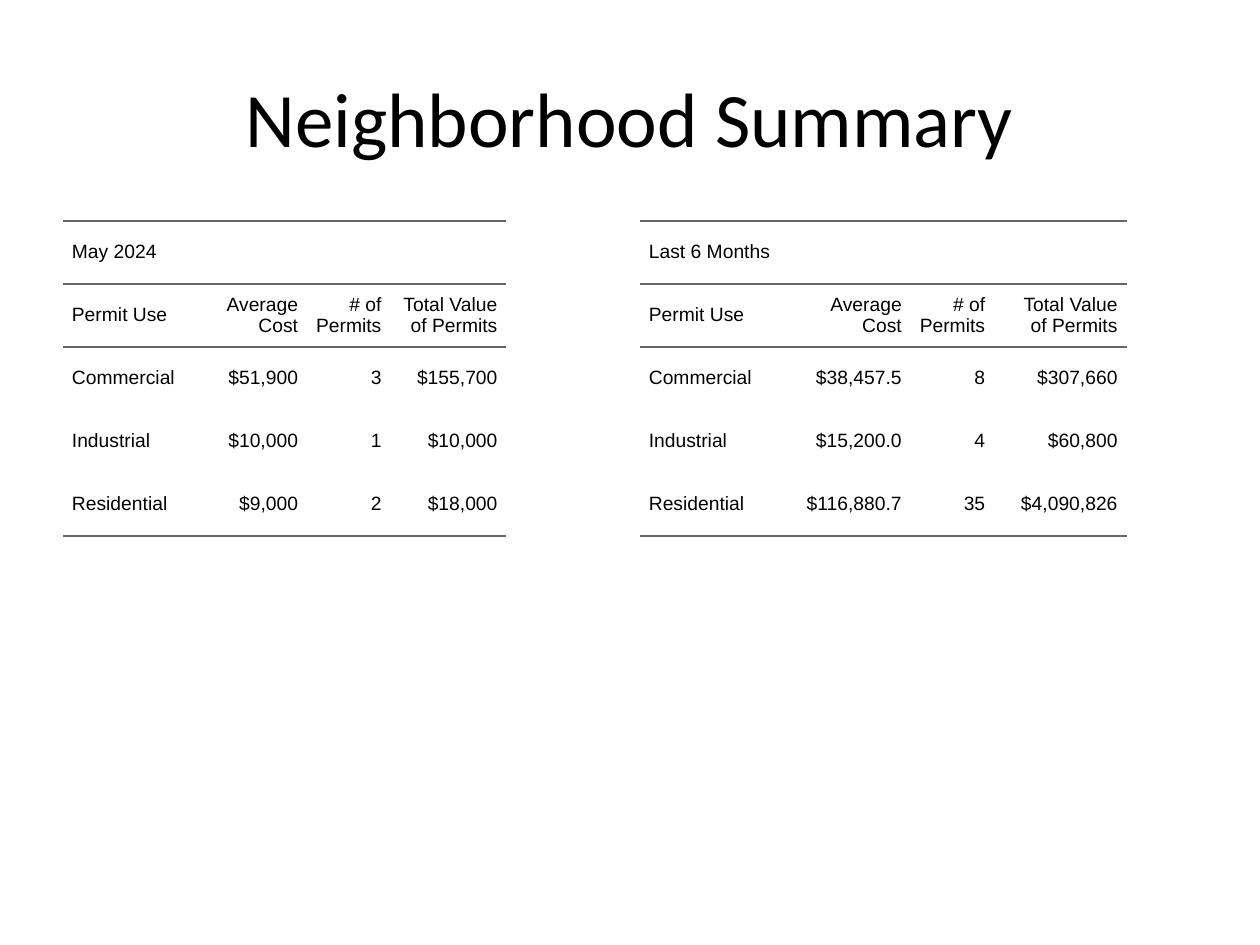
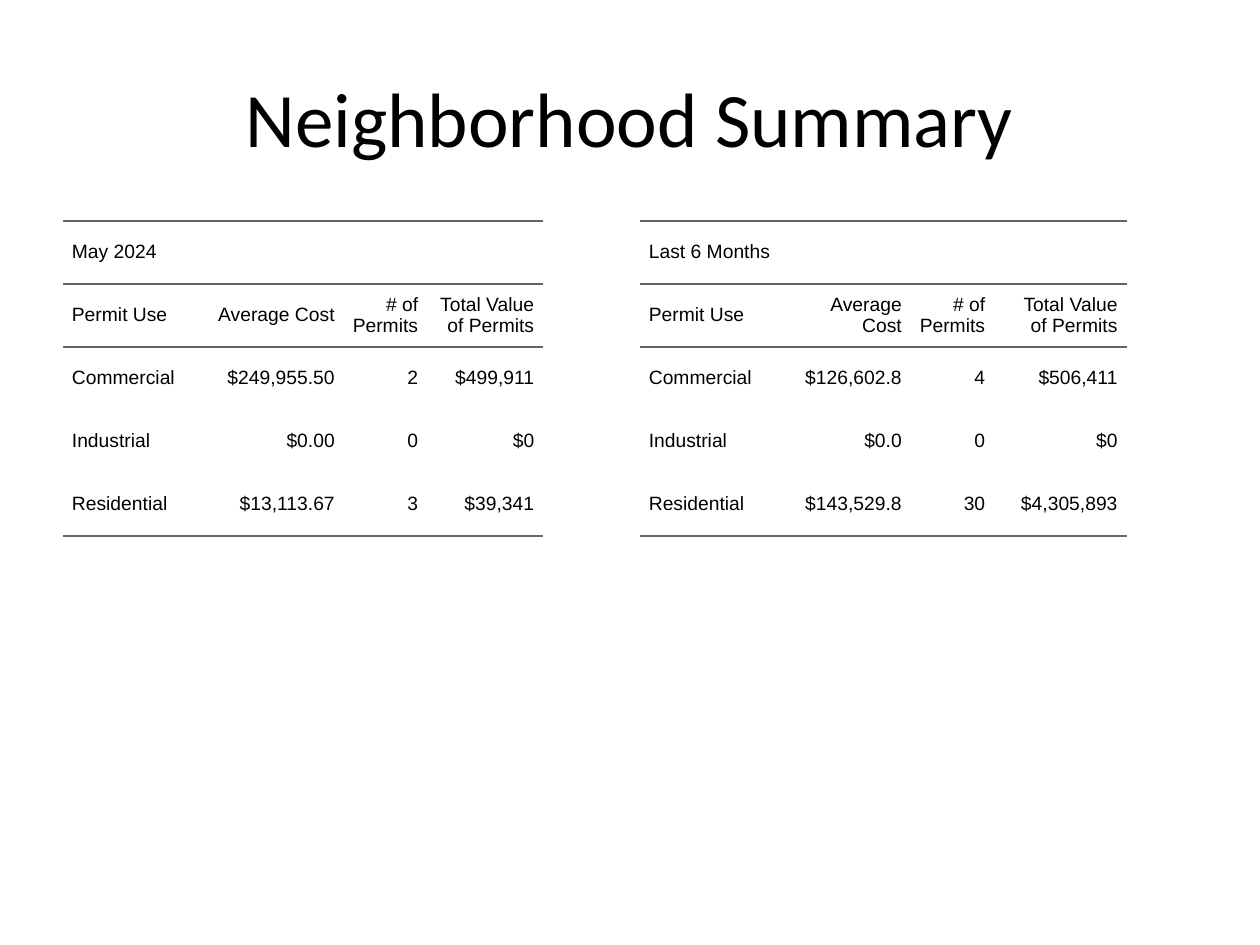
from dataclasses import dataclass

from lxml.etree import SubElement
from pptx import Presentation
from pptx.dml.color import RGBColor
from pptx.enum.text import MSO_ANCHOR, PP_ALIGN
from pptx.oxml.ns import qn
from pptx.oxml.xmlchemy import OxmlElement
from pptx.util import Cm, Pt

BLACK = RGBColor(0x00, 0x00, 0x00)
WHITE = RGBColor(0xFF, 0xFF, 0xFF)
RULE_GRAY = RGBColor(0x66, 0x66, 0x66)
TITLE_FONT = "Calibri"
TABLE_FONT = "Arial"
TITLE = "Neighborhood Summary"
HEADINGS = ("Permit Use", "Average Cost", "# of Permits", "Total Value of Permits")
USES = ("Commercial", "Industrial", "Residential")
MARGIN = Cm(1.27)
RIGHT_TABLE_LEFT = Cm(12.9)
TABLE_TOP = Cm(4.45)
FRAME_WIDTH = Cm(11.23)
FRAME_HEIGHT = Cm(12.57)
ROW_HEIGHT = Cm(1.27)
CELL_PADDING = Cm(0.18)
USE_WIDTH = Cm(2.79)
COUNT_WIDTH = Cm(1.68)
PLAIN_TABLE_STYLE = "{2D5ABB26-0587-4C30-8999-92F81FD0307C}"


@dataclass(frozen=True)
class PermitTable:
    period: str
    left: int
    cost_width: int
    value_width: int
    figures: tuple[tuple[str, str, str], ...]

    @property
    def rows(self) -> list[tuple[str, ...]]:
        return [(self.period,), HEADINGS] + [
            (use, *figures) for use, figures in zip(USES, self.figures)
        ]

    @property
    def widths(self) -> tuple[int, ...]:
        return USE_WIDTH, self.cost_width, COUNT_WIDTH, self.value_width


def may_table(cost_width: int, *figures: tuple[str, str, str]) -> PermitTable:
    return PermitTable("May 2024", MARGIN, cost_width, Cm(2.34), figures)


def half_year_table(*figures: tuple[str, str, str]) -> PermitTable:
    return PermitTable("Last 6 Months", RIGHT_TABLE_LEFT, Cm(2.67), Cm(2.67), figures)


SUMMARIES = (
    (
        may_table(
            Cm(2.13),
            ("$51,900", "3", "$155,700"),
            ("$10,000", "1", "$10,000"),
            ("$9,000", "2", "$18,000"),
        ),
        half_year_table(
            ("$38,457.5", "8", "$307,660"),
            ("$15,200.0", "4", "$60,800"),
            ("$116,880.7", "35", "$4,090,826"),
        ),
    ),
    (
        may_table(
            Cm(2.87),
            ("$249,955.50", "2", "$499,911"),
            ("$0.00", "0", "$0"),
            ("$13,113.67", "3", "$39,341"),
        ),
        half_year_table(
            ("$126,602.8", "4", "$506,411"),
            ("$0.0", "0", "$0"),
            ("$143,529.8", "30", "$4,305,893"),
        ),
    ),
)


def write_text(text_frame, text: str, *, font: str, size: float, align,
               spacing: float = 0, indent: int = 0) -> None:
    paragraph = text_frame.paragraphs[0]
    paragraph.alignment = align
    paragraph.space_before = paragraph.space_after = Pt(spacing)
    properties = paragraph._p.get_or_add_pPr()
    for name in ("marL", "marR"):
        properties.set(name, str(indent))
    properties.set("indent", "0")
    run = paragraph.add_run()
    run.text = text
    run.font.name = font
    run.font.size = Pt(size)
    run.font.color.rgb = BLACK


def add_rule(cell, edge: str) -> None:
    line = OxmlElement(f"a:{edge}")
    line.set("w", str(Pt(1.5)))
    fill = SubElement(line, qn("a:solidFill"))
    SubElement(fill, qn("a:srgbClr")).set("val", str(RULE_GRAY))
    cell._tc.get_or_add_tcPr().insert(0, line)


def format_cell(cell, row: int, last_row: int) -> None:
    cell.vertical_anchor = MSO_ANCHOR.MIDDLE
    cell.margin_left = cell.margin_right = 0
    cell.margin_top = cell.margin_bottom = CELL_PADDING
    cell.fill.background()
    if row in (0, 1, last_row):
        add_rule(cell, "lnB")
    if row in (0, 1):
        add_rule(cell, "lnT")


def add_permit_table(slide, permits: PermitTable) -> None:
    rows = permits.rows
    frame = slide.shapes.add_table(
        len(rows), len(HEADINGS), permits.left, TABLE_TOP, FRAME_WIDTH, FRAME_HEIGHT
    )
    table = frame.table
    table.first_row = table.horz_banding = False
    table._tbl.tblPr.find(qn("a:tableStyleId")).text = PLAIN_TABLE_STYLE
    for column, width in zip(table.columns, permits.widths):
        column.width = width
    for table_row in table.rows:
        table_row.height = ROW_HEIGHT
    frame.width, frame.height = FRAME_WIDTH, FRAME_HEIGHT
    table.cell(0, 0).merge(table.cell(0, len(HEADINGS) - 1))
    for row, texts in enumerate(rows):
        for column in range(len(HEADINGS)):
            format_cell(table.cell(row, column), row, len(rows) - 1)
        for column, text in enumerate(texts):
            write_text(
                table.cell(row, column).text_frame, text, font=TABLE_FONT, size=11,
                align=PP_ALIGN.RIGHT if column else PP_ALIGN.LEFT,
                spacing=5, indent=CELL_PADDING,
            )


def add_title(slide) -> None:
    title = slide.shapes.title
    title.left, title.top = MARGIN, Cm(0.76)
    title.width, title.height = Cm(22.86), Cm(3.18)
    title.text_frame.vertical_anchor = MSO_ANCHOR.MIDDLE
    write_text(title.text_frame, TITLE, font=TITLE_FONT, size=44, align=PP_ALIGN.CENTER)


def main() -> None:
    presentation = Presentation()
    presentation.slide_width, presentation.slide_height = Cm(25.4), Cm(19.05)
    background = presentation.slide_master.background.fill
    background.solid()
    background.fore_color.rgb = WHITE
    title_only = presentation.slide_layouts.get_by_name("Title Only")
    for summary in SUMMARIES:
        slide = presentation.slides.add_slide(title_only)
        add_title(slide)
        for permits in summary:
            add_permit_table(slide, permits)
    presentation.save("out.pptx")


if __name__ == "__main__":
    main()
